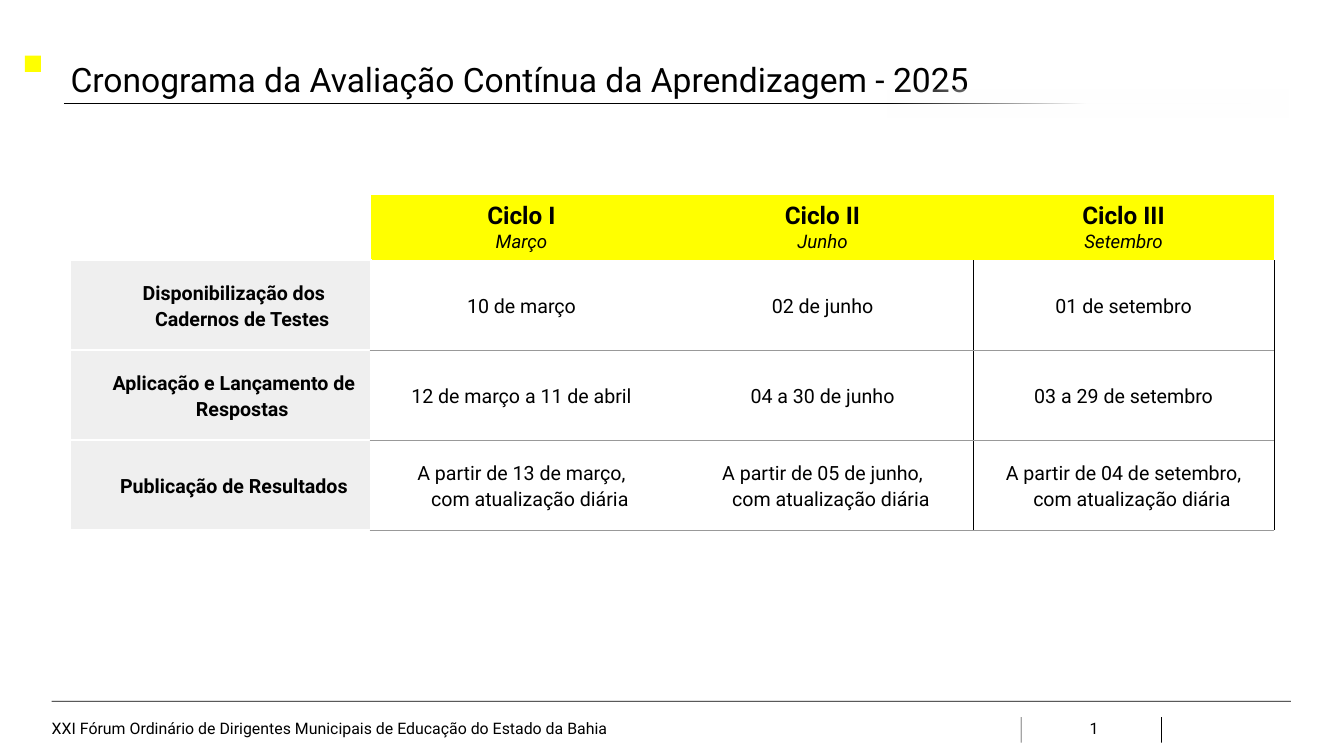
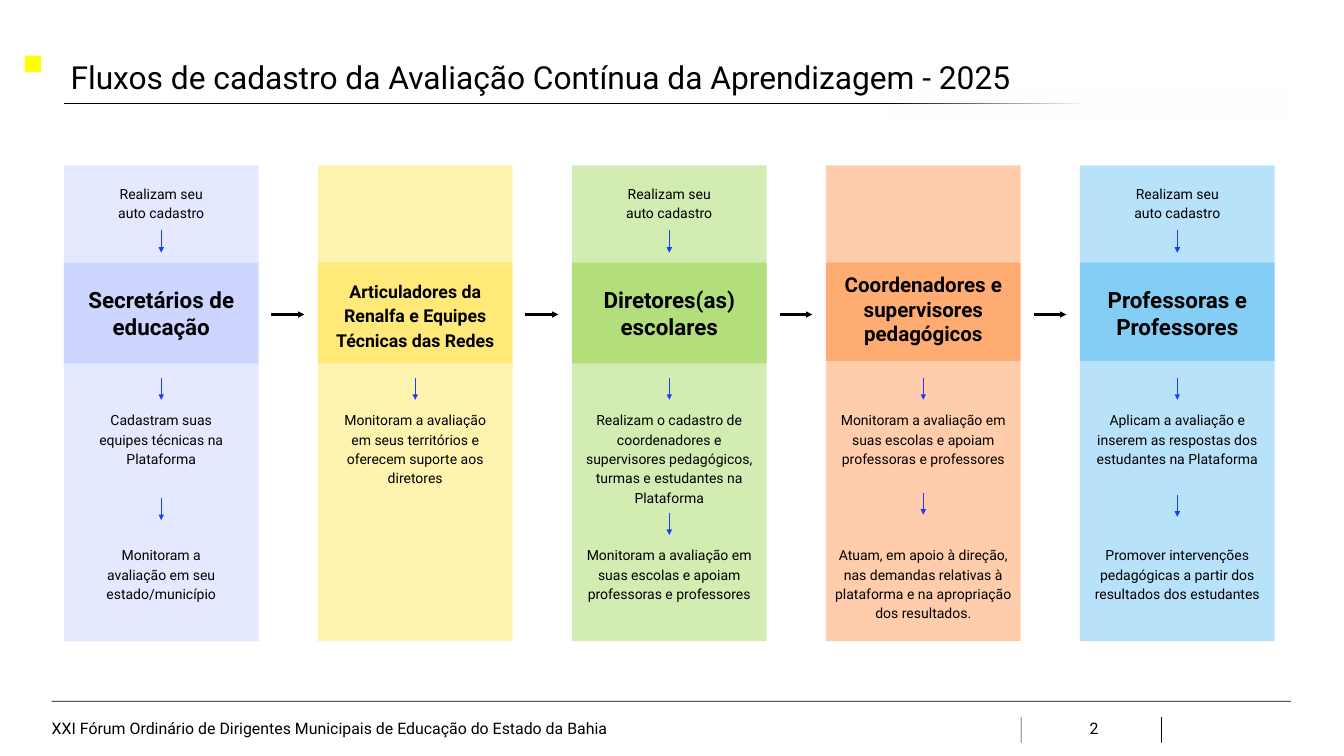
from dataclasses import dataclass

from lxml import etree
from pptx import Presentation
from pptx.dml.color import RGBColor
from pptx.enum.shapes import MSO_CONNECTOR, MSO_SHAPE
from pptx.enum.text import MSO_ANCHOR, MSO_AUTO_SIZE, PP_ALIGN
from pptx.oxml.ns import qn
from pptx.util import Inches, Pt

RECTANGLE = MSO_SHAPE.RECTANGLE
STRAIGHT = MSO_CONNECTOR.STRAIGHT
LEFT, CENTER = PP_ALIGN.LEFT, PP_ALIGN.CENTER
TOP, MIDDLE = MSO_ANCHOR.TOP, MSO_ANCHOR.MIDDLE
NO_AUTOFIT = MSO_AUTO_SIZE.NONE
TITLE_ONLY = 5


@dataclass(frozen=True)
class Theme:
    font: str = "Roboto"
    black: str = "000000"
    white: str = "FFFFFF"
    yellow: str = "FFFF00"
    blue: str = "183EFF"
    label_grey: str = "EFEFEF"
    rule_grey: str = "999999"
    footer_size: int = 17
    cycle_size: int = 26
    month_size: int = 20
    cell_size: int = 21
    step_size: int = 15
    loose: float = 1.15


THEME = Theme()
FOOTER = "XXI Fórum Ordinário de Dirigentes Municipais de Educação do Estado da Bahia"

# Calendar: header cells, then one row per stage
CYCLES = [("Ciclo I", "Março"), ("Ciclo II", "Junho"), ("Ciclo III", "Setembro")]
STAGES = [
    ("Disponibilização dos Cadernos de Testes",
     "10 de março", "02 de junho", "01 de setembro"),
    ("Aplicação e Lançamento de Respostas",
     "12 de março a 11 de abril", "04 a 30 de junho", "03 a 29 de setembro"),
    ("Publicação de Resultados",
     "A partir de 13 de março,\vcom atualização diária",
     "A partir de 05 de junho,\vcom atualização diária",
     "A partir de 04 de setembro,\vcom atualização diária"),
]
GREY_EDGE = (THEME.rule_grey, 0.75)
BLACK_EDGE = (THEME.black, 0.75)
WHITE_EDGE = (THEME.white, 3)

# Flow columns
COLUMN_LEFT, COLUMN_PITCH, COLUMN_WIDTH = 0.95, 3.78, 2.9
COLUMN_TOP, COLUMN_HEIGHT = 2.46, 7.08
BAND_TOP, BAND_MIDDLE = 3.91, 4.66
STEP_TOPS = (5.99, 8)
ARROW_LENGTH = 0.33


@dataclass(frozen=True)
class Role:
    name: str
    color: str
    opacity: int
    steps: tuple  # (text, number of lines)
    signs_up: bool = True
    size: int = 24
    spacing: float = 1.0
    name_top: float = 4.16
    band_height: float = 1.5
    second_arrow: float = 0


ROLES = [
    Role("Secretários de educação", "183FFF", 11,
         (("Cadastram suas\vequipes técnicas na Plataforma", 3),
          ("Monitoram a\vavaliação em seu estado/município", 3)),
         second_arrow=7.41),
    Role("Articuladores da Renalfa e Equipes\vTécnicas das Redes", "FFD901", 31,
         (("Monitoram a avaliação\nem seus territórios e\n"
           "oferecem suporte aos\ndiretores", 4),),
         signs_up=False, size=19, spacing=THEME.loose, name_top=4.03),
    Role("Diretores(as) escolares", "6EC206", 31,
         (("Realizam o cadastro de coordenadores e supervisores pedagógicos, "
           "turmas e estudantes na Plataforma", 5),
          ("Monitoram a avaliação em suas escolas e apoiam "
           "professoras e professores", 3)),
         second_arrow=7.63),
    Role("Coordenadores e supervisores pedagógicos", "FF6A02", 33,
         (("Monitoram a avaliação em suas escolas e apoiam "
           "professoras e professores", 3),
          ("Atuam, em apoio à direção, nas demandas relativas à plataforma "
           "e na apropriação dos resultados.", 4)),
         signs_up=False, size=22, name_top=3.95, band_height=1.46,
         second_arrow=7.33),
    Role("Professoras e Professores", "119FEE", 30,
         (("Aplicam a avaliação e inserem as respostas dos "
           "estudantes na Plataforma", 3),
          ("Promover intervenções pedagógicas a partir dos "
           "resultados dos estudantes", 3)),
         band_height=1.46, second_arrow=7.36),
]


def rgb(color):
    return RGBColor.from_string(color)


def add_child(parent, tag, **attributes):
    child = etree.SubElement(parent, qn(tag))
    for name, value in attributes.items():
        child.set(name, str(value))
    return child


def style_para(para, size, bold=False, italic=False, align=LEFT, spacing=1.0):
    para.alignment = align
    para.line_spacing = spacing
    font = para.font
    font.name, font.size = THEME.font, Pt(size)
    font.bold, font.italic = bold, italic
    font.color.rgb = rgb(THEME.black)


def set_frame(frame, anchor, across, down):
    frame.word_wrap = True
    frame.auto_size = NO_AUTOFIT
    frame.vertical_anchor = anchor
    frame.margin_left = frame.margin_right = Inches(across)
    frame.margin_top = frame.margin_bottom = Inches(down)


def add_text(page, place, text, size, anchor=TOP, margins=(0.1, 0.1), **style):
    box = page.shapes.add_textbox(*map(Inches, place))
    set_frame(box.text_frame, anchor, *margins)
    box.text_frame.text = text
    for para in box.text_frame.paragraphs:
        style_para(para, size, **style)
    return box


def add_rectangle(page, place, color, opacity=100):
    shape = page.shapes.add_shape(RECTANGLE, *map(Inches, place))
    shape.shadow.inherit = False
    shape.line.fill.background()
    shape.fill.solid()
    shape.fill.fore_color.rgb = rgb(color)
    if opacity < 100:
        swatch = shape._element.spPr.find(".//" + qn("a:srgbClr"))
        add_child(swatch, "a:alpha", val=opacity * 1000)
    return shape


def add_line(page, start, end, color, width, arrow=False):
    line = page.shapes.add_connector(STRAIGHT, *map(Inches, start + end))
    line.line.color.rgb = rgb(color)
    line.line.width = Pt(width)
    if arrow:
        add_child(line.line._get_or_add_ln(), "a:tailEnd", type="triangle")
    add_child(line._element.spPr, "a:effectLst")


def add_fade(page, place):
    """White rectangle that is clear on the left and solid from the middle."""
    shape = add_rectangle(page, place, THEME.white)
    shape.fill.gradient()
    shape.fill.gradient_angle = 0
    stops = shape._element.spPr.find(".//" + qn("a:gsLst"))
    for stop in list(stops):
        stops.remove(stop)
    for position, alpha in ((0, 0), (10, 0), (55, 100), (100, 100)):
        stop = add_child(stops, "a:gs", pos=position * 1000)
        swatch = add_child(stop, "a:srgbClr", val=THEME.white)
        add_child(swatch, "a:alpha", val=alpha * 1000)


def add_page_number(page, number):
    box = add_text(page, (15.9, 10.53, 0.76, 0.6), "", THEME.footer_size,
                   MIDDLE, (0.15, 0.07), align=CENTER)
    field = add_child(box.text_frame.paragraphs[0]._p, "a:fld", type="slidenum",
                      id="{B6F15528-21DE-4FAA-801E-634DDDAF4B2B}")
    span = add_child(field, "a:rPr", lang="pt-BR", sz=THEME.footer_size * 100)
    add_child(span, "a:latin", typeface=THEME.font)
    add_child(field, "a:t").text = str(number)


def add_page(deck, title, size):
    """Slide with the shared footer, title rule, marker and title."""
    page = deck.slides.add_slide(deck.slide_layouts[TITLE_ONLY])
    # Footer
    add_rectangle(page, (0.77, 10.43, 18.44, 0.01), THEME.black)
    for left in (15.19, 17.28):
        add_rectangle(page, (left, 10.67, 0.01, 0.38), THEME.black)
    add_page_number(page, len(deck.slides) + 2)
    add_text(page, (0.77, 10.64, 11.7, 0.38), FOOTER, THEME.footer_size,
             MIDDLE, (0, 0))
    # Title
    add_line(page, (0.95, 1.54), (18.62, 1.54), THEME.black, 0.75)
    add_fade(page, (12.54, 1.33, 6.63, 0.42))
    add_rectangle(page, (0.37, 0.83, 0.24, 0.24), THEME.yellow)
    box = page.shapes.title
    box.left, box.top, box.width, box.height = map(Inches, (0.95, 0.52, 17.55, 0.79))
    set_frame(box.text_frame, TOP, 0.1, 0.05)
    box.text_frame.text = title
    style_para(box.text_frame.paragraphs[0], size, spacing=1.5)
    return page


def format_cell(cell, fill=None, **edges):
    """Set margins, the four edges (left, right, top, bottom) and the fill."""
    cell.vertical_anchor = MIDDLE
    cell.margin_left = cell.margin_right = Inches(0.1)
    cell.margin_top = cell.margin_bottom = Inches(0.1)
    properties = cell._tc.get_or_add_tcPr()
    for side in ("left", "right", "top", "bottom"):
        color, width = edges.get(side, (None, 0))
        edge = add_child(properties, "a:ln" + side[0].upper(), w=Pt(width))
        if color:
            add_child(add_child(edge, "a:solidFill"), "a:srgbClr", val=color)
        else:
            add_child(edge, "a:noFill")
    if fill:
        cell.fill.solid()
        cell.fill.fore_color.rgb = rgb(fill)
    else:
        cell.fill.background()


def write_cell(cell, text, indent, bold=False):
    para = cell.text_frame.paragraphs[0]
    para.text = text
    properties = para._p.get_or_add_pPr()
    properties.set("marL", str(Inches(indent)))
    properties.set("indent", str(Inches(-0.25)))
    style_para(para, THEME.cell_size, bold, align=CENTER, spacing=THEME.loose)


def add_calendar(page):
    place = map(Inches, (1.04, 2.9, 17.92, 4.99))
    table = page.shapes.add_table(len(STAGES) + 1, len(CYCLES) + 1, *place).table
    table.first_row = table.horz_banding = False
    for column in table.columns:
        column.width = Inches(4.48)
    for index, row in enumerate(table.rows):
        row.height = Inches(1.34 if index else 0.97)

    # Header row
    format_cell(table.cell(0, 0), bottom=WHITE_EDGE)
    for column, (cycle, month) in enumerate(CYCLES, 1):
        cell = table.cell(0, column)
        format_cell(cell, THEME.yellow)
        cell.text_frame.text = f"{cycle}\n{month}"
        first, second = cell.text_frame.paragraphs
        style_para(first, THEME.cycle_size, bold=True, align=CENTER)
        style_para(second, THEME.month_size, italic=True, align=CENTER)

    # Stage rows
    for row, (stage, *dates) in enumerate(STAGES, 1):
        label = table.cell(row, 0)
        format_cell(label, THEME.label_grey, left=WHITE_EDGE, right=WHITE_EDGE,
                    top=WHITE_EDGE, bottom=WHITE_EDGE)
        write_cell(label, stage, 0.65, bold=True)
        for column, date in enumerate(dates, 1):
            edges = {"bottom": GREY_EDGE}
            if row > 1:
                edges["top"] = GREY_EDGE
            if column == 1:
                edges["left"] = WHITE_EDGE
            if column >= 2:
                edges["right"] = BLACK_EDGE
            if column == 3:
                edges["left"] = BLACK_EDGE
            format_cell(table.cell(row, column), **edges)
            write_cell(table.cell(row, column), date, 0.25)


def add_step(page, left, top, text, lines):
    add_text(page, (left, top, COLUMN_WIDTH, 0.16 + 0.29 * lines), text,
             THEME.step_size, align=CENTER, spacing=THEME.loose)


def add_role(page, left, role):
    add_rectangle(page, (left, COLUMN_TOP, COLUMN_WIDTH, COLUMN_HEIGHT),
                  role.color, role.opacity)
    add_rectangle(page, (left, BAND_TOP, COLUMN_WIDTH, role.band_height),
                  role.color, role.opacity)
    name_height = 2 * (BAND_MIDDLE - role.name_top)
    add_text(page, (left, role.name_top, COLUMN_WIDTH, name_height), role.name,
             role.size, bold=True, align=CENTER, spacing=role.spacing)
    arrow_tops = [5.62]
    if role.signs_up:
        add_step(page, left, 2.62, "Realizam seu\vauto cadastro", 2)
        arrow_tops.append(3.43)
    if role.second_arrow:
        arrow_tops.append(role.second_arrow)
    for top, (text, lines) in zip(STEP_TOPS, role.steps):
        add_step(page, left, top, text, lines)
    middle = left + COLUMN_WIDTH / 2
    for top in arrow_tops:
        add_line(page, (middle, top), (middle, top + ARROW_LENGTH),
                 THEME.blue, 1.5, arrow=True)


def main():
    deck = Presentation()
    deck.slide_width, deck.slide_height = Inches(20), Inches(11.25)

    add_calendar(add_page(
        deck, "Cronograma da Avaliação Contínua da Aprendizagem - 2025", 36))

    flow = add_page(
        deck, "Fluxos de cadastro da Avaliação Contínua da Aprendizagem - 2025", 34)
    for index, role in enumerate(ROLES):
        left = COLUMN_LEFT + index * COLUMN_PITCH
        add_role(flow, left, role)
        if index:
            add_line(flow, (left - 0.69, 4.68), (left - 0.2, 4.68),
                     THEME.black, 2.25, arrow=True)

    deck.save("out.pptx")


if __name__ == "__main__":
    main()
